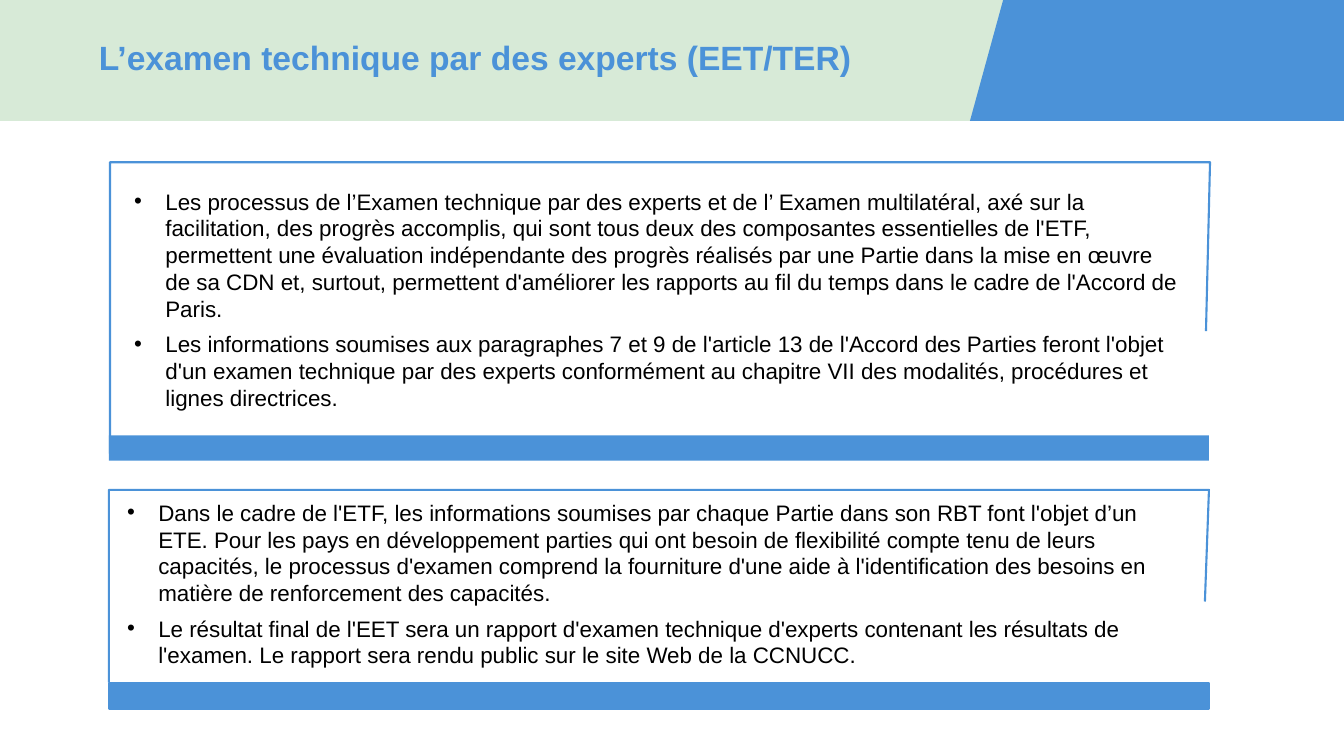
from pptx import Presentation
from pptx.dml.color import RGBColor
from pptx.enum.shapes import MSO_SHAPE
from pptx.enum.text import MSO_ANCHOR
from pptx.oxml.ns import qn
from pptx.util import Inches, Pt
from lxml import etree

RECT = MSO_SHAPE.RECTANGLE
MIDDLE = MSO_ANCHOR.MIDDLE
WIDTH, HEIGHT = Inches(13.33), Inches(7.5)
COLORS = {"blue": "4B92D8", "mint": "D7EAD7", "black": "000000"}
FONT = "Arial"

# Shared panel geometry, in percent of the slide
BAR_LEFT, PANEL_WIDTH, BAR_HEIGHT = 8.1, 81.85, 3.33
SLANT_X, SLANT_SHARE = 0.3, 0.58  # right edge leans in and stops part-way

TITLE = "L’examen technique par des experts (EET/TER)"
PANELS = [
    {
        "frame": (8.18, 21.47, 60),  # left, top, bottom
        "bar": (57.6, None),  # top, outline width
        "text": (9.98, 24.67, 78.39, 30.53),
        "bullets": [
            "Les processus de l’Examen technique par des experts et de l’ Examen "
            "multilatéral, axé sur la facilitation, des progrès accomplis, qui sont "
            "tous deux des composantes essentielles de l'ETF, permettent une "
            "évaluation indépendante des progrès réalisés par une Partie dans la "
            "mise en œuvre de sa CDN et, surtout, permettent d'améliorer les rapports "
            "au fil du temps dans le cadre de l'Accord de Paris.",
            "Les informations soumises aux paragraphes 7 et 9 de l'article 13 de "
            "l'Accord des Parties feront l'objet d'un examen technique par des experts "
            "conformément au chapitre VII des modalités, procédures et lignes "
            "directrices.",
        ],
    },
    {
        "frame": (8.1, 64.8, 90.27),
        "bar": (90.4, 1.5),
        "text": (9.45, 65.87, 78.99, 23.33),
        "bullets": [
            "Dans le cadre de l'ETF, les informations soumises par chaque Partie dans "
            "son RBT font l'objet d’un ETE. Pour les pays en développement parties qui "
            "ont besoin de flexibilité compte tenu de leurs capacités, le processus "
            "d'examen comprend la fourniture d'une aide à l'identification des besoins "
            "en matière de renforcement des capacités.",
            "Le résultat final de l'EET sera un rapport d'examen technique d'experts "
            "contenant les résultats de l'examen. Le rapport sera rendu public sur le "
            "site Web de la CCNUCC.",
        ],
    },
]


def rgb(name):
    return RGBColor.from_string(COLORS[name])


def point(x, y):
    return round(WIDTH * x / 100), round(HEIGHT * y / 100)


def box(left, top, width, height):
    return *point(left, top), *point(width, height)


def paint(sp, fill=None, line=None):
    """Fill with a colour, outline in blue at a width in points."""
    sp.shadow.inherit = False
    if fill:
        sp.fill.solid()
        sp.fill.fore_color.rgb = rgb(fill)
    else:
        sp.fill.background()
    if line:
        sp.line.color.rgb = rgb("blue")
        sp.line.width = Pt(line)
    else:
        sp.line.fill.background()


def add_bar(s, area, fill, line=None):
    paint(s.shapes.add_shape(RECT, *box(*area)), fill, line)


def add_outline(s, points, close, fill=None, line=None):
    start, *rest = [point(*xy) for xy in points]
    builder = s.shapes.build_freeform(*start)
    builder.add_line_segments(rest, close=close)
    paint(builder.convert_to_shape(), fill, line)


def add_text_frame(s, area, right=0, bottom=0):
    tf = s.shapes.add_textbox(*box(*area)).text_frame
    tf.word_wrap = True
    tf.vertical_anchor = MIDDLE
    tf.margin_left = tf.margin_top = 0
    tf.margin_right, tf.margin_bottom = Inches(right), Inches(bottom)
    return tf


def style(p, size, color, bold=False):
    for r in p.runs:
        r.font.name, r.font.size, r.font.bold = FONT, Pt(size), bold
        r.font.color.rgb = rgb(color)


def add_title(s):
    p = add_text_frame(s, (7.35, 3.87, 58.89, 8.13)).paragraphs[0]
    p.text = TITLE
    p.line_spacing = 0.9
    style(p, 24, "blue", bold=True)


def add_bullets(s, area, bullets):
    tf = add_text_frame(s, area, right=0.1, bottom=0.05)
    for i, text in enumerate(bullets):
        p = tf.add_paragraph() if i else tf.paragraphs[0]
        p.text = text
        if i:
            p.space_before = Pt(6)
        pPr = p._p.get_or_add_pPr()
        pPr.set("marL", str(Inches(0.31)))
        pPr.set("indent", str(-Inches(0.31)))
        etree.SubElement(pPr, qn("a:buFont"), typeface=FONT)
        etree.SubElement(pPr, qn("a:buChar"), char="•")
        style(p, 16, "black")


def add_panel(s, panel):
    left, top, bottom = panel["frame"]
    right = left + PANEL_WIDTH
    slant_end = (right - SLANT_X, top + SLANT_SHARE * (bottom - top))
    add_outline(s, [(left, bottom), (left, top), (right, top), slant_end],
                close=False, line=1.5)
    bar_top, bar_line = panel["bar"]
    add_bar(s, (BAR_LEFT, bar_top, PANEL_WIDTH, BAR_HEIGHT), "blue", bar_line)
    add_bullets(s, panel["text"], panel["bullets"])


def main():
    prs = Presentation()
    prs.slide_width, prs.slide_height = WIDTH, HEIGHT
    s = prs.slides.add_slide(prs.slide_layouts[6])

    # Header band with its slanted corner
    add_bar(s, (0, 0, 100, 16), "mint")
    add_outline(s, [(72.17, 16), (74.64, 0), (100, 0), (100, 16)],
                close=True, fill="blue")
    add_title(s)

    # Framed bullet panels
    for panel in PANELS:
        add_panel(s, panel)

    prs.save("out.pptx")


if __name__ == "__main__":
    main()
